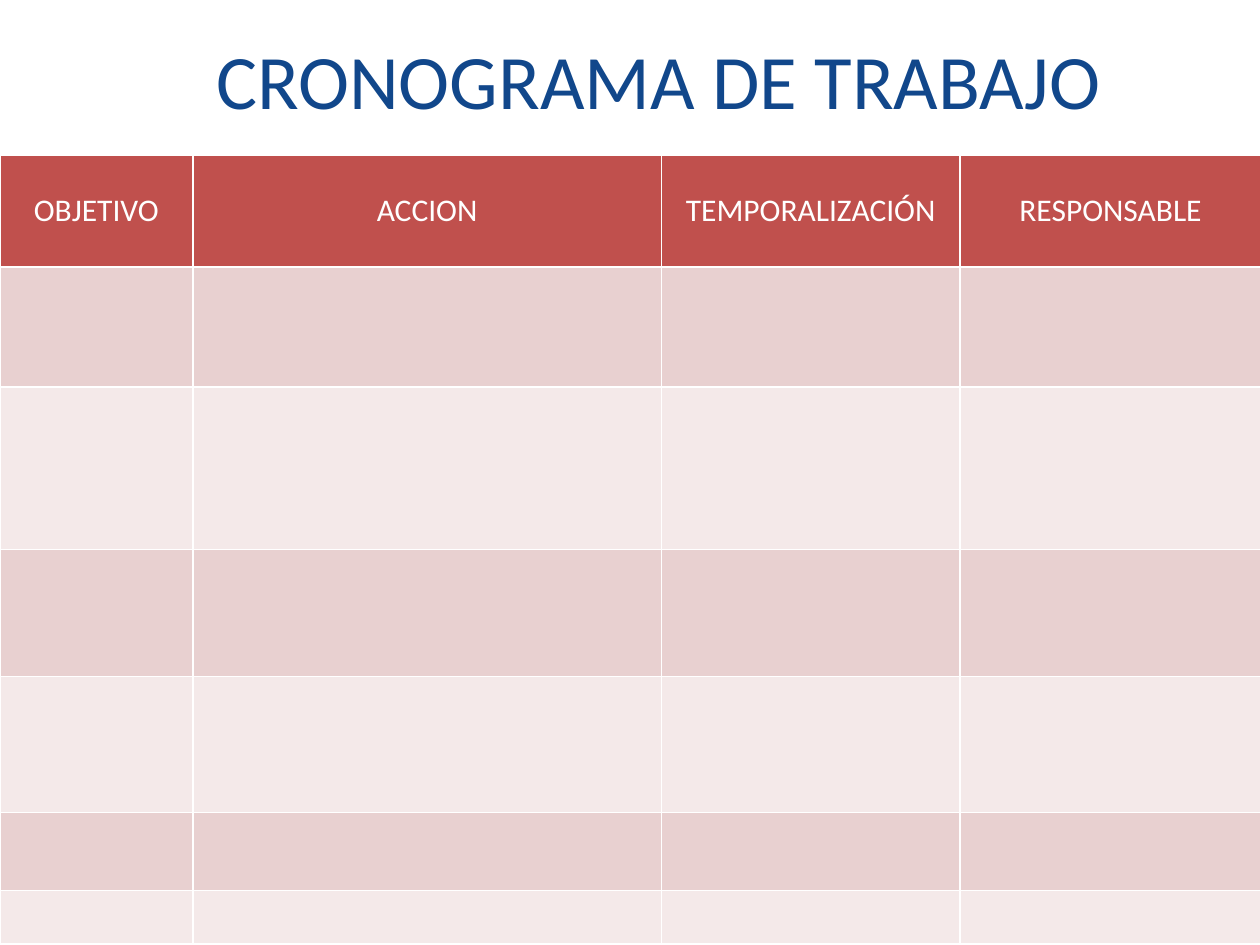
from dataclasses import dataclass

from lxml.etree import SubElement
from pptx import Presentation
from pptx.dml.color import RGBColor as RGB
from pptx.enum.text import MSO_ANCHOR as Anchor, PP_ALIGN as Align
from pptx.oxml.ns import qn
from pptx.util import Inches, Pt


@dataclass(frozen=True)
class Theme:
    font: str = "Calibri"
    title_size: int = 44
    header_size: int = 18
    title_color: str = "11478B"
    header_text: str = "FFFFFF"
    header_fill: str = "C0504D"
    bands: tuple = ("E8D0D0", "F4E9E9")
    border_color: str = "FFFFFF"
    border_width: int = 1


class SlideBuilder:
    def __init__(self, slide, theme):
        self.slide = slide
        self.theme = theme

    def set_text(self, frame, text, size, color):
        frame.text = text
        para = frame.paragraphs[0]
        para.alignment = Align.CENTER
        font = para.runs[0].font
        font.name = self.theme.font
        font.size = Pt(size)
        font.bold = False
        font.color.rgb = RGB.from_string(color)

    def title(self, text, left, top, width, height):
        box = self.slide.shapes.title
        box.left, box.top = Inches(left), Inches(top)
        box.width, box.height = Inches(width), Inches(height)
        box.text_frame.vertical_anchor = Anchor.MIDDLE
        self.set_text(box.text_frame, text, self.theme.title_size, self.theme.title_color)

    def border(self, cell):
        """Draw a line on all four sides; call before filling the cell."""
        properties = cell._tc.get_or_add_tcPr()
        for side in ("a:lnL", "a:lnR", "a:lnT", "a:lnB"):
            line = SubElement(properties, qn(side), w=str(Pt(self.theme.border_width)))
            fill = SubElement(line, qn("a:solidFill"))
            SubElement(fill, qn("a:srgbClr"), val=self.theme.border_color)

    def table(self, headers, left, top, column_widths, row_heights):
        """Add a table with a header row above empty banded rows."""
        theme = self.theme
        table = self.slide.shapes.add_table(
            len(row_heights), len(column_widths), Inches(left), Inches(top),
            Inches(sum(column_widths)), Inches(sum(row_heights))).table
        for column, width in zip(table.columns, column_widths):
            column.width = Inches(width)
        for index, (row, height) in enumerate(zip(table.rows, row_heights)):
            row.height = Inches(height)
            color = theme.bands[(index - 1) % 2] if index else theme.header_fill
            for cell in row.cells:
                self.border(cell)
                cell.fill.solid()
                cell.fill.fore_color.rgb = RGB.from_string(color)
        for cell, text in zip(table.rows[0].cells, headers):
            cell.vertical_anchor = Anchor.MIDDLE
            self.set_text(cell.text_frame, text, theme.header_size, theme.header_text)


def main():
    deck = Presentation()
    deck.slide_width, deck.slide_height = Inches(10), Inches(7.5)
    title_only = deck.slide_layouts[5]
    builder = SlideBuilder(deck.slides.add_slide(title_only), Theme())
    builder.title("CRONOGRAMA DE TRABAJO", 0.73, 0, 9, 1.25)
    builder.table(
        ("OBJETIVO", "ACCION", "TEMPORALIZACIÓN", "RESPONSABLE"),
        left=0, top=1.23,
        column_widths=(1.53, 3.72, 2.37, 2.39),
        row_heights=(0.89, 0.95, 1.29, 1.01, 1.08, 0.62, 0.42))
    deck.save("out.pptx")


if __name__ == "__main__":
    main()
